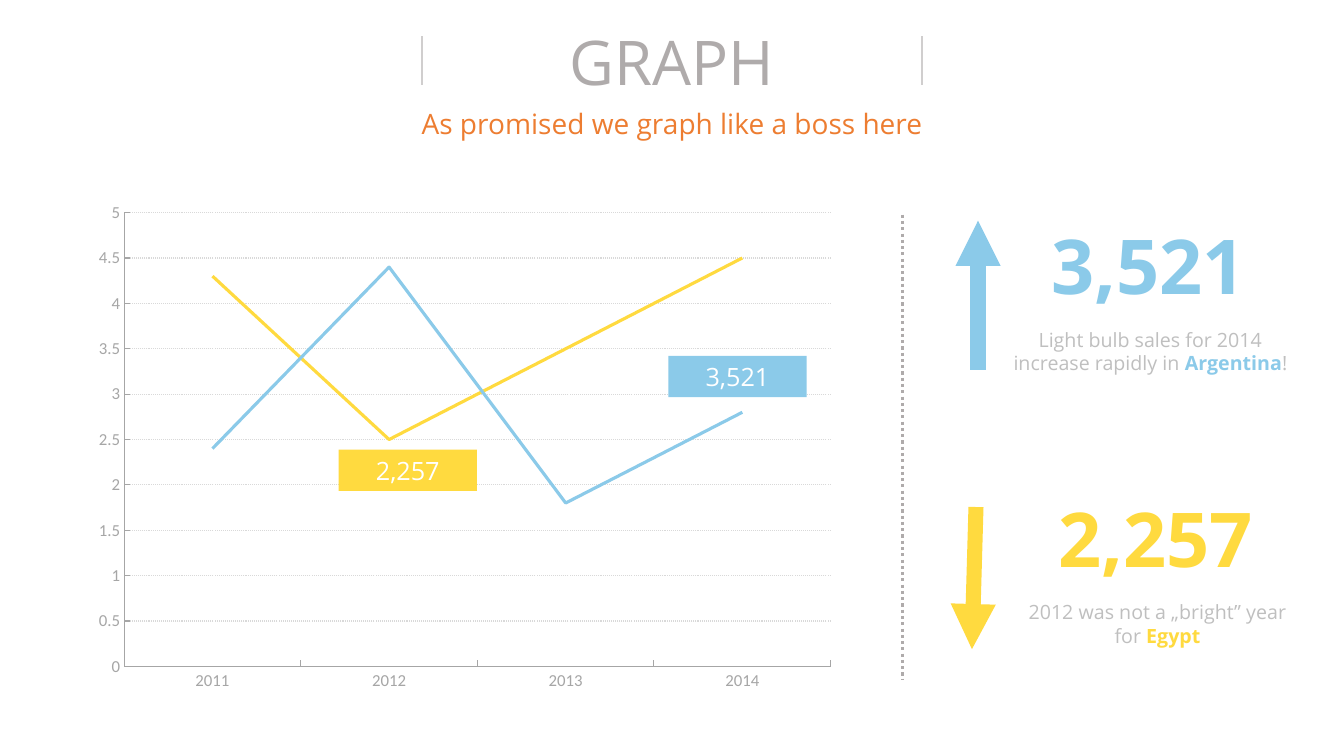
from lxml import etree
from pptx import Presentation, util as u
from pptx.chart.data import CategoryChartData
from pptx.dml.color import RGBColor
from pptx.enum import chart as charts, dml, shapes, text
from pptx.oxml.ns import qn

BLUE, YELLOW = "8BCAE9", "FFDA3F"
ORANGE, WHITE = "ED7D31", "FFFFFF"
TITLE_GRAY, RULE_GRAY, NOTE_GRAY = "AFABAB", "D0CECE", "BFBFBF"
AXIS_GRAY, GRID_GRAY = "A6A6A6", "D9D9D9"
DOTTED = dml.MSO_LINE.ROUND_DOT


def color(hex_string):
    return RGBColor.from_string(hex_string)


def style_font(font, hex_string, **values):
    for name, value in values.items():
        setattr(font, name, value)
    font.color.rgb = color(hex_string)


def style_line(line, hex_string, width, dash=None):
    line.color.rgb = color(hex_string)
    line.width = u.Pt(width)
    if dash:
        line.dash_style = dash


def write(frame, pieces, size, anchor=text.MSO_ANCHOR.MIDDLE):
    for name, value in {"word_wrap": True, "vertical_anchor": anchor}.items():
        setattr(frame, name, value)
    paragraph = frame.paragraphs[0]
    paragraph.alignment = text.PP_ALIGN.CENTER
    for words, hex_string, bold in pieces:
        run = paragraph.add_run()
        run.text = words
        style_font(run.font, hex_string, name="Open Sans", size=u.Pt(size), bold=bold)


def add_label(slide, box, pieces, size, **options):
    label = slide.shapes.add_textbox(*map(u.Inches, box))
    write(label.text_frame, pieces, size, **options)


def add_rule(slide, start, end, hex_string, width, dash=None, arrow=False):
    rule = slide.shapes.add_connector(
        shapes.MSO_CONNECTOR.STRAIGHT, *map(u.Inches, (*start, *end)))
    style_line(rule.line, hex_string, width, dash)
    if arrow:
        etree.SubElement(rule.line._get_or_add_ln(), qn("a:tailEnd"), type="triangle")
    etree.SubElement(rule._element.spPr, qn("a:effectLst"))


def add_header(slide, left, top, width):
    top_anchor = text.MSO_ANCHOR.TOP
    add_label(slide, (left, top + 0.82, width, 0.44),
              [("As promised we graph like a boss here", ORANGE, False)], 20,
              anchor=top_anchor)
    add_label(slide, (left, top, width, 0.84),
              [("GRAPH", TITLE_GRAY, False)], 44, anchor=top_anchor)
    middle = left + width / 2
    for x in (middle - 2.48, middle + 2.48):
        add_rule(slide, (x, top + 0.17), (x, top + 0.65), RULE_GRAY, 1.5)


def add_tag(slide, left, top, figure, hex_string):
    tag = slide.shapes.add_shape(
        shapes.MSO_SHAPE.RECTANGLE, *map(u.Inches, (left, top, 1.37, 0.41)))
    tag.shadow.inherit = False
    tag.fill.solid()
    tag.fill.fore_color.rgb = color(hex_string)
    tag.line.fill.background()
    write(tag.text_frame, [(figure, WHITE, False)], 18)


def add_sales_chart(slide, left, top, width, height):
    sales = CategoryChartData()
    sales.categories = ["2011", "2012", "2013", "2014"]
    sales.add_series("Series 1", (4.3, 2.5, 3.5, 4.5))
    sales.add_series("Series 2", (2.4, 4.4, 1.8, 2.8))
    chart = slide.shapes.add_chart(
        charts.XL_CHART_TYPE.LINE, *map(u.Inches, (left, top, width, height)), sales).chart
    chart.has_legend = chart.has_title = False
    style_font(chart.font, "000000", name="Calibri", size=u.Pt(10))
    chart.plots[0].vary_by_categories = False
    for axis in (chart.category_axis, chart.value_axis):
        axis.major_tick_mark = charts.XL_TICK_MARK.INSIDE
        axis.minor_tick_mark = charts.XL_TICK_MARK.NONE
        style_font(axis.tick_labels.font, AXIS_GRAY, name="Calibri", size=u.Pt(12))
        style_line(axis.format.line, AXIS_GRAY, 0.75)
    scale = {"minimum_scale": 0, "maximum_scale": 5, "major_unit": 0.5,
             "has_major_gridlines": True}
    for name, value in scale.items():
        setattr(chart.value_axis, name, value)
    style_line(chart.value_axis.major_gridlines.format.line, GRID_GRAY, 0.75, DOTTED)
    for series, hex_string in zip(chart.plots[0].series, (YELLOW, BLUE)):
        series.smooth = False
        series.marker.style = charts.XL_MARKER_STYLE.NONE
        style_line(series.format.line, hex_string, 2.25)
    add_tag(slide, left + 5.8, top + 1.62, "3,521", BLUE)
    add_tag(slide, left + 2.53, top + 2.55, "2,257", YELLOW)


def add_highlight(slide, left, top, figure, note, hex_string, arrow):
    add_label(slide, (left + 0.1, top, 3.37, 0.81), [(figure, hex_string, True)], 54)
    add_label(slide, (left + 0.34, top + 0.86, 2.92, 0.81), note, 14)
    start, end = [(left + x, top + y) for x, y in arrow]
    add_rule(slide, start, end, hex_string, 10.75, arrow=True)


def build_graph_slide(slide):
    add_header(slide, 2.17, 0.19, 8.99)
    add_sales_chart(slide, 0.83, 1.91, 7.56, 5.04)
    add_rule(slide, (8.95, 2.13), (8.95, 6.74), TITLE_GRAY, 2.25, DOTTED)
    add_highlight(slide, 9.61, 2.22, "3,521", [
        ("Light bulb sales for 2014 increase rapidly in ", NOTE_GRAY, False),
        ("Argentina", BLUE, True),
        ("!", NOTE_GRAY, False),
    ], BLUE, ((0.09, 1.45), (0.09, -0.03)))
    add_highlight(slide, 9.68, 4.92, "2,257", [
        ("2012 was not a „bright” year for ", NOTE_GRAY, False),
        ("Egypt", YELLOW, True),
    ], YELLOW, ((0, 0.11), (-0.04, 1.52)))


def main():
    deck = Presentation()
    deck.slide_width, deck.slide_height = u.Inches(13.33), u.Inches(7.5)
    build_graph_slide(deck.slides.add_slide(deck.slide_layouts[6]))
    deck.save("out.pptx")


if __name__ == "__main__":
    main()
